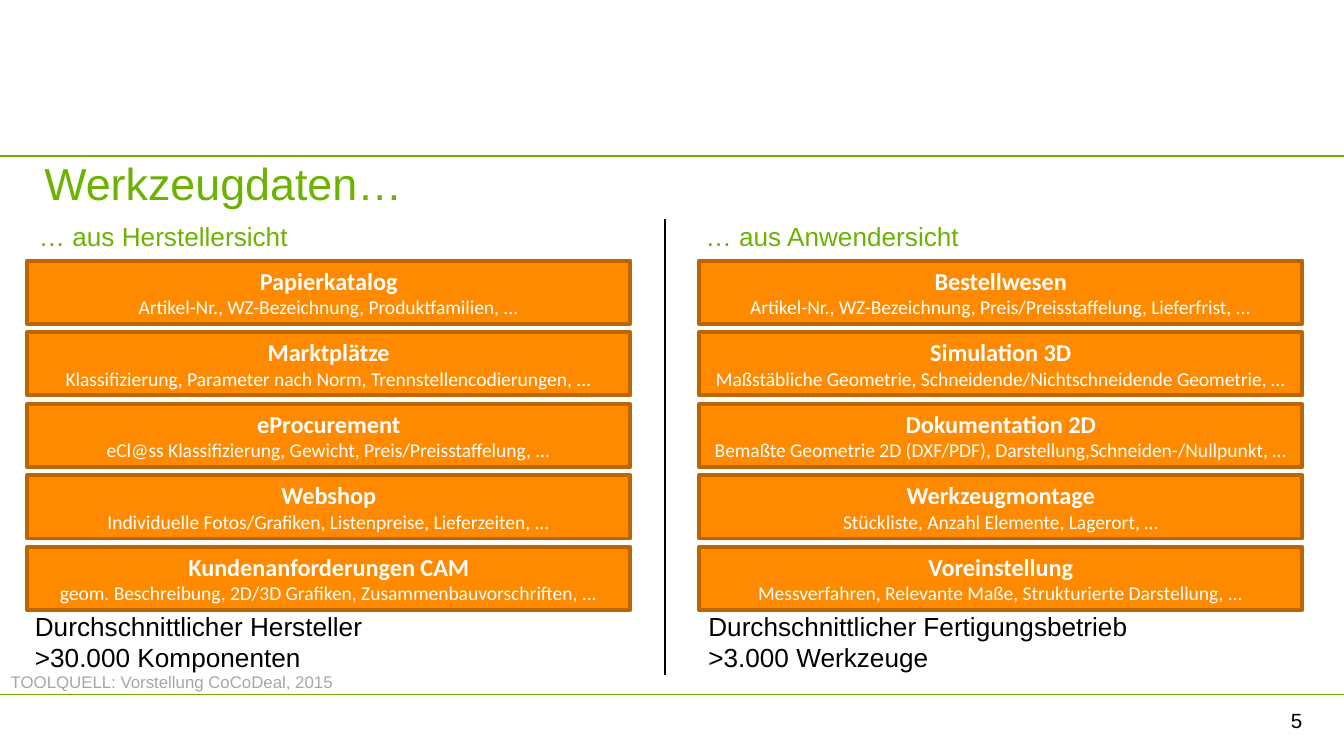
from dataclasses import dataclass

from lxml.etree import SubElement
from pptx import Presentation
from pptx.dml.color import RGBColor
from pptx.enum.shapes import MSO_CONNECTOR as Connector, MSO_SHAPE as Shape
from pptx.enum.text import MSO_ANCHOR as Anchor, PP_ALIGN as Align
from pptx.oxml import parse_xml
from pptx.oxml.ns import nsdecls, qn
from pptx.util import Inches, Pt


@dataclass(frozen=True)
class Theme:
    green: str = "6CB200"
    orange: str = "FF8A00"
    brown: str = "BD6600"
    black: str = "000000"
    white: str = "FFFFFF"
    gray: str = "A6A6A6"
    body_font: str = "Arial"
    card_font: str = "Calibri"
    title_size: float = 24
    text_size: float = 14
    card_title_size: float = 13
    card_text_size: float = 10.5
    number_size: float = 11
    source_size: float = 9
    no_table_style: str = "{2D5ABB26-0587-4C30-8999-92F81FD0307C}"


class SlideBuilder:
    def __init__(self, slide, theme):
        self.shapes = slide.shapes
        self.theme = theme

    def format_para(self, para, size, color, font=None, bold=False, align=Align.LEFT):
        para.alignment = align
        for span in para.runs:
            span.font.name = font or self.theme.body_font
            span.font.size = Pt(size)
            span.font.bold = bold
            span.font.color.rgb = RGBColor.from_string(color)

    def set_margins(self, frame, side, top):
        frame.margin_left = frame.margin_right = Inches(side)
        frame.margin_top = frame.margin_bottom = Inches(top)

    def rule(self, y):
        line = self.shapes.add_connector(
            Connector.STRAIGHT, Inches(0), Inches(y), Inches(10), Inches(y))
        line.line.color.rgb = RGBColor.from_string(self.theme.green)
        line.line.width = Pt(0.75)
        SubElement(line._element.spPr, qn("a:effectLst"))

    def text(self, area, text, size, color, align=Align.LEFT,
             anchor=Anchor.TOP, margins=(0.08, 0.04), wrap=True):
        frame = self.shapes.add_textbox(*map(Inches, area)).text_frame
        frame.word_wrap = wrap
        frame.vertical_anchor = anchor
        self.set_margins(frame, *margins)
        frame.text = text
        for para in frame.paragraphs:
            self.format_para(para, size, color, align=align)

    def card(self, left, top, title, details):
        theme = self.theme
        box = self.shapes.add_shape(
            Shape.RECTANGLE, Inches(left), Inches(top), Inches(4.49), Inches(0.47))
        box.shadow.inherit = False
        box.fill.solid()
        box.fill.fore_color.rgb = RGBColor.from_string(theme.orange)
        box.line.color.rgb = RGBColor.from_string(theme.brown)
        box.line.width = Pt(2)
        frame = box.text_frame
        frame.word_wrap = True
        frame.vertical_anchor = Anchor.MIDDLE
        self.set_margins(frame, 0.08, 0.04)
        frame.text = f"{title}\n{details}"
        heading, body = frame.paragraphs
        self.format_para(heading, theme.card_title_size, theme.white,
                         theme.card_font, True, Align.CENTER)
        self.format_para(body, theme.card_text_size, theme.white,
                         theme.card_font, False, Align.CENTER)

    def cell_border(self, cell, side):
        border = parse_xml(
            f'<a:{side} {nsdecls("a")} w="{Pt(1)}"><a:solidFill>'
            f'<a:srgbClr val="{self.theme.black}"/></a:solidFill></a:{side}>')
        cell._tc.get_or_add_tcPr().insert(0, border)

    def view_table(self, headings, indents):
        theme = self.theme
        table = self.shapes.add_table(
            2, 2, Inches(0.2), Inches(1.63), Inches(10.08), Inches(3.39)).table
        table.first_row = table.horz_banding = False
        table._tbl.tblPr.find(qn("a:tableStyleId")).text = theme.no_table_style
        for column, width in zip(table.columns, (4.75, 5.33)):
            column.width = Inches(width)
        for row, height in zip(table.rows, (0.57, 2.82)):
            row.height = Inches(height)
            for cell, side in zip(row.cells, ("lnR", "lnL")):
                cell.fill.background()
                self.set_margins(cell, 0.09, 0.03)
                self.cell_border(cell, side)
        for cell, heading, indent in zip(table.rows[0].cells, headings, indents):
            cell.margin_left = Inches(indent)
            cell.text = heading
            self.format_para(cell.text_frame.paragraphs[0], theme.text_size, theme.green)


MAKER_CARDS = [
    ("Papierkatalog", "Artikel-Nr., WZ-Bezeichnung, Produktfamilien, ..."),
    ("Marktplätze", "Klassifizierung, Parameter nach Norm, Trennstellencodierungen, ..."),
    ("eProcurement", "eCl@ss Klassifizierung, Gewicht, Preis/Preisstaffelung, ..."),
    ("Webshop", "Individuelle Fotos/Grafiken, Listenpreise, Lieferzeiten, ..."),
    ("Kundenanforderungen CAM",
     "geom. Beschreibung, 2D/3D Grafiken, Zusammenbauvorschriften, ..."),
]
USER_CARDS = [
    ("Bestellwesen", "Artikel-Nr., WZ-Bezeichnung, Preis/Preisstaffelung, Lieferfrist, ..."),
    ("Simulation 3D", "Maßstäbliche Geometrie, Schneidende/Nichtschneidende Geometrie, …"),
    ("Dokumentation 2D",
     "Bemaßte Geometrie 2D (DXF/PDF), Darstellung,Schneiden-/Nullpunkt, …"),
    ("Werkzeugmontage", "Stückliste, Anzahl Elemente, Lagerort, …"),
    ("Voreinstellung", "Messverfahren, Relevante Maße, Strukturierte Darstellung, ..."),
]


def main():
    deck = Presentation()
    deck.slide_width = Inches(10)
    deck.slide_height = deck.slide_width * 9 // 16
    theme = Theme()
    page = SlideBuilder(deck.slides.add_slide(deck.slide_layouts[6]), theme)

    for y in (1.16, 5.17):
        page.rule(y)
    page.text((0.33, 1.16, 9.32, 0.94), "Werkzeugdaten…",
              theme.title_size, theme.green, margins=(0, 0))
    page.view_table(("… aus Herstellersicht", "… aus Anwendersicht"), (0.09, 0.3))
    page.text((7.36, 5.21, 2.33, 0.3), "5", theme.number_size, theme.black,
              Align.RIGHT, Anchor.MIDDLE, (0, 0))

    first_top, last_top = 1.94, 4.07
    for left, cards in ((0.2, MAKER_CARDS), (5.2, USER_CARDS)):
        pitch = (last_top - first_top) / (len(cards) - 1)
        for index, (title, details) in enumerate(cards):
            page.card(left, first_top + index * pitch, title, details)

    page.text((0, 4.96, 2.6, 0.23), "TOOLQUELL: Vorstellung CoCoDeal, 2015",
              theme.source_size, theme.gray, wrap=False)
    page.text((0.18, 4.5, 6.16, 0.55),
              "Durchschnittlicher Hersteller\n>30.000 Komponenten",
              theme.text_size, theme.black)
    page.text((5.19, 4.5, 4.91, 0.55),
              "Durchschnittlicher Fertigungsbetrieb\n>3.000 Werkzeuge",
              theme.text_size, theme.black)

    deck.save("out.pptx")


if __name__ == "__main__":
    main()
